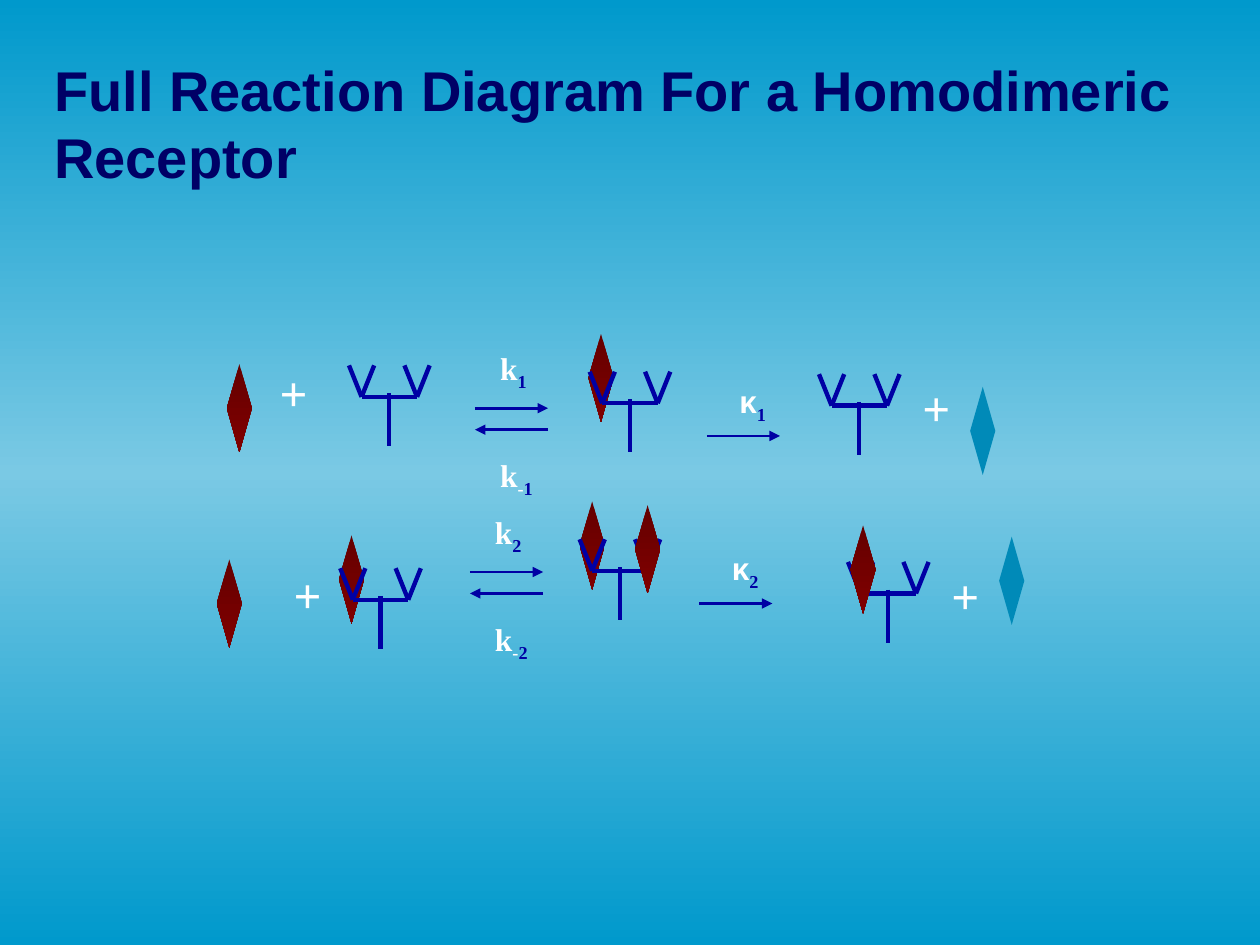
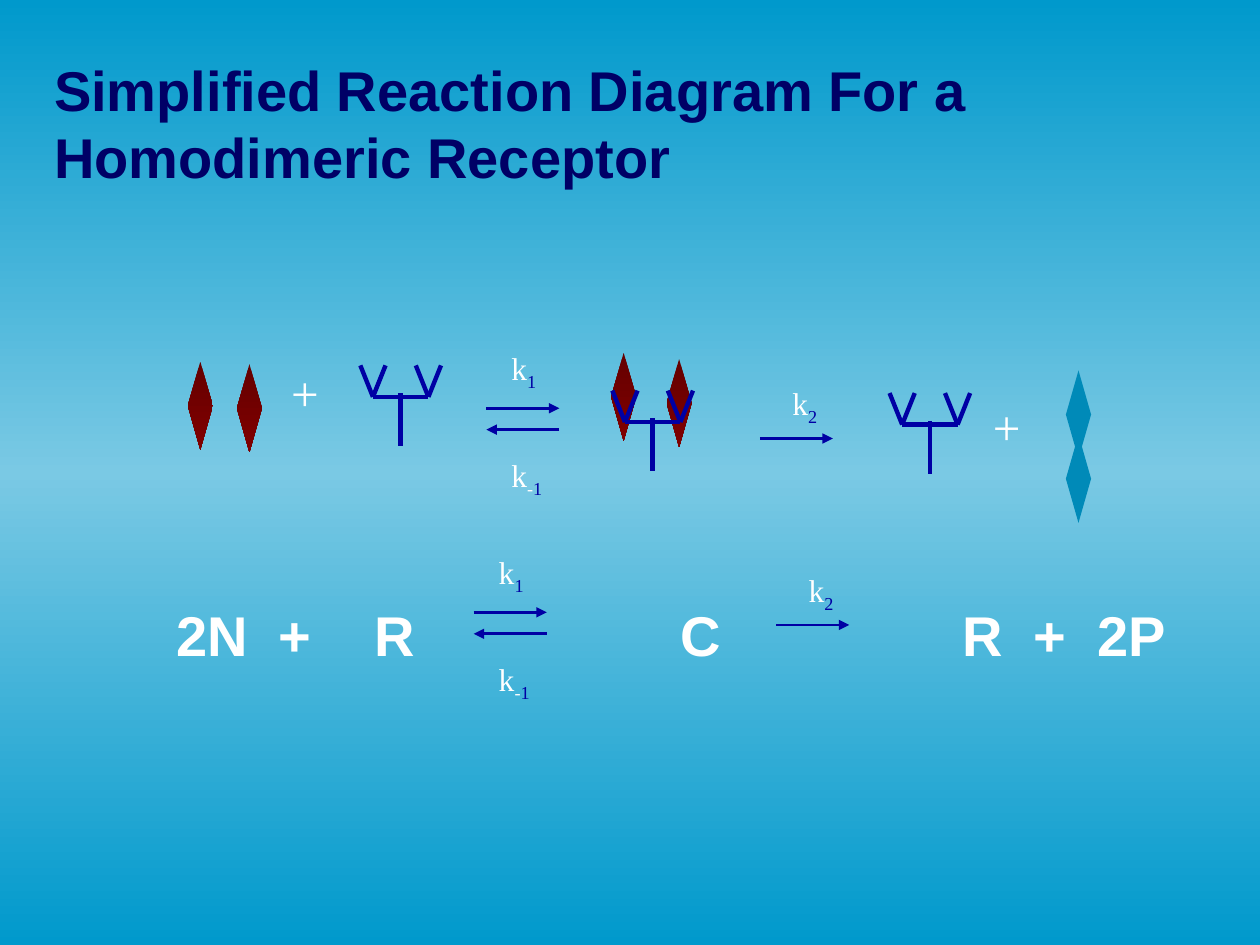
from copy import deepcopy

from lxml.etree import SubElement
from pptx import Presentation
from pptx.dml.color import RGBColor
from pptx.enum.shapes import MSO_CONNECTOR, MSO_SHAPE
from pptx.enum.text import MSO_ANCHOR, PP_ALIGN
from pptx.oxml.ns import qn
from pptx.util import Inches, Pt

# Shared colours and fonts
SKY = RGBColor(0x00, 0x99, 0xCC)
PALE_SKY = RGBColor(0x7A, 0xC9, 0xE4)
NAVY = RGBColor(0x00, 0x00, 0x66)
BLUE = RGBColor(0x00, 0x00, 0xA4)
WHITE = RGBColor(0xFF, 0xFF, 0xFF)
DARK_RED = RGBColor(0x65, 0x00, 0x00)
RED = RGBColor(0x80, 0x00, 0x00)
TEAL = RGBColor(0x00, 0x8A, 0xB8)
SANS, SERIF = "Arial", "Times New Roman"

# Receptor strokes, relative to its top left corner
RECEPTOR = [
    (0, 0, 0.1, 0.25), (0.1, 0.25, 0.2, 0),
    (0.32, 0.22, 0.32, 0.64), (0.1, 0.25, 0.54, 0.25),
    (0.44, 0, 0.54, 0.25), (0.54, 0.25, 0.64, 0),
]

# Positions are left, top; reversible and forward steps start at their arrow
SLIDES = [
    {
        "title": "Full Reaction Diagram For a Homodimeric Receptor",
        "bold": True,
        "ligands_behind": [(1.8, 2.89), (4.67, 2.65), (4.6, 3.98), (1.72, 4.44), (2.69, 4.25)],
        "receptors": [(2.77, 2.9), (4.68, 2.95), (6.5, 2.97),
                      (2.7, 4.51), (4.6, 4.28), (6.73, 4.46)],
        "ligands_in_front": [(5.04, 4.01), (6.75, 4.17)],
        "products": [(7.7, 3.07), (7.93, 4.26)],
        "pluses": [(2.07, 2.83), (7.17, 2.95), (2.18, 4.43), (7.4, 4.44)],
        "reversible": [(3.77, 3.24, "1"), (3.73, 4.54, "2")],
        "forward": [(5.61, 3.46, "κ", "1"), (5.55, 4.79, "κ", "2")],
        "equation": None,
    },
    {
        "title": "Simplified Reaction Diagram For a Homodimeric Receptor",
        "bold": False,
        "ligands_behind": [(1.49, 2.87), (1.88, 2.89), (4.85, 2.8), (5.29, 2.85)],
        "receptors": [(2.86, 2.9), (4.86, 3.1), (7.06, 3.12)],
        "ligands_in_front": [],
        "products": [(8.46, 2.94), (8.46, 3.45)],
        "pluses": [(2.16, 2.83), (7.73, 3.1)],
        "reversible": [(3.86, 3.24, "1"), (3.76, 4.86, "1")],
        "forward": [(6.03, 3.48, "k", "2"), (6.16, 4.96, "k", "2")],
        "equation": "2N\t+\tR\tC\tR\t+\t2P",
    },
]
EQUATION_TABS = [0.81, 1.57, 4.0, 6.24, 6.8, 7.31]


def add_text(slide, box, text, shape=None, size=18, font=SERIF, color=WHITE, bold=False,
             align=PP_ALIGN.LEFT, anchor=MSO_ANCHOR.TOP, sign="", index=""):
    """Write text, with an optional subscript made of a sign and an index."""
    shape = shape or slide.shapes.add_textbox(0, 0, 0, 0)
    shape.left, shape.top, shape.width, shape.height = map(Inches, box)
    frame = shape.text_frame
    frame.word_wrap = True
    frame.vertical_anchor = anchor
    paragraph = frame.paragraphs[0]
    paragraph.alignment = align
    parts = [(text, font, color), (sign, SERIF, WHITE), (index, SERIF, BLUE)]
    for position, (part, part_font, part_color) in enumerate(parts):
        if not part:
            continue
        run = paragraph.add_run()
        run.text = part
        run.font.name = part_font
        run.font.size = Pt(size)
        run.font.bold = bold
        run.font.color.rgb = part_color
        if position > 0:
            run.font._element.set("baseline", "-25000")
    return paragraph


def add_line(slide, x1, y1, x2, y2, width=2.5, arrow=False):
    line = slide.shapes.add_connector(MSO_CONNECTOR.STRAIGHT, *map(Inches, (x1, y1, x2, y2)))
    line.line.color.rgb = BLUE
    line.line.width = Pt(width)
    if arrow:
        SubElement(line.line._get_or_add_ln(), qn("a:tailEnd"), type="triangle")
    SubElement(line._element.spPr, qn("a:effectLst"))


presentation = Presentation()
presentation.slide_width = Inches(10)
presentation.slide_height = Inches(7.5)

# Background on the master: a vertical gradient with a pale middle
master = presentation.slide_master
background = master.background.fill
background.gradient()
background.gradient_angle = 270
first_stop = next(master.element.iter(qn("a:gs")))
first_stop.addnext(deepcopy(first_stop))
for stop, position, color in zip(background.gradient_stops, (0, 0.5, 1), (SKY, PALE_SKY, SKY)):
    stop.position = position
    stop.color.rgb = color

for content in SLIDES:
    slide = presentation.slides.add_slide(presentation.slide_layouts[5])
    bold = content["bold"]
    add_text(slide, (0.33, 0.25, 9.31, 1.45), content["title"], shape=slide.shapes.title,
             size=32, font=SANS, color=NAVY, bold=True, anchor=MSO_ANCHOR.MIDDLE)

    # Ligands, receptors and products, from back to front
    for kind in ("ligands_behind", "receptors", "ligands_in_front", "products"):
        for x, y in content[kind]:
            if kind == "receptors":
                for x1, y1, x2, y2 in RECEPTOR:
                    add_line(slide, x + x1, y + y1, x + x2, y + y2)
                continue
            diamond = slide.shapes.add_shape(
                MSO_SHAPE.DIAMOND, Inches(x), Inches(y), Inches(0.2), Inches(0.7))
            diamond.shadow.inherit = False
            diamond.line.fill.background()
            if kind == "products":
                diamond.fill.solid()
                diamond.fill.fore_color.rgb = TEAL
            else:
                diamond.fill.gradient()
                diamond.fill.gradient_angle = 270
                for stop, color in zip(diamond.fill.gradient_stops, (DARK_RED, RED)):
                    stop.color.rgb = color

    # Plus signs
    for x, y in content["pluses"]:
        add_text(slide, (x, y, 0.52, 0.57), "+", size=28, bold=bold, align=PP_ALIGN.CENTER)

    # Reversible steps: a pair of arrows with a rate above and below
    for x, y, index in content["reversible"]:
        add_line(slide, x, y, x + 0.58, y, width=1.5, arrow=True)
        add_line(slide, x + 0.58, y + 0.17, x, y + 0.17, width=1.5, arrow=True)
        add_text(slide, (x + 0.1, y - 0.52, 0.48, 0.4), "k", index=index, bold=bold)
        add_text(slide, (x + 0.1, y + 0.33, 0.58, 0.4), "k", sign="-", index=index, bold=bold)

    # Forward steps: one arrow with a rate above
    for x, y, rate, index in content["forward"]:
        add_line(slide, x, y, x + 0.58, y, width=1.5, arrow=True)
        add_text(slide, (x + 0.16, y - 0.48, 0.6, 0.4), rate, index=index, bold=bold,
                 font=SANS if rate == "κ" else SERIF)

    # Equation in symbols, set on tab stops
    if content["equation"]:
        paragraph = add_text(slide, (1.3, 4.72, 8.35, 0.82), content["equation"],
                             size=32, font=SANS, bold=True)
        tab_list = SubElement(paragraph._p.get_or_add_pPr(), qn("a:tabLst"))
        for tab in EQUATION_TABS:
            SubElement(tab_list, qn("a:tab"), pos=str(Inches(tab)), algn="l")

presentation.save("out.pptx")
